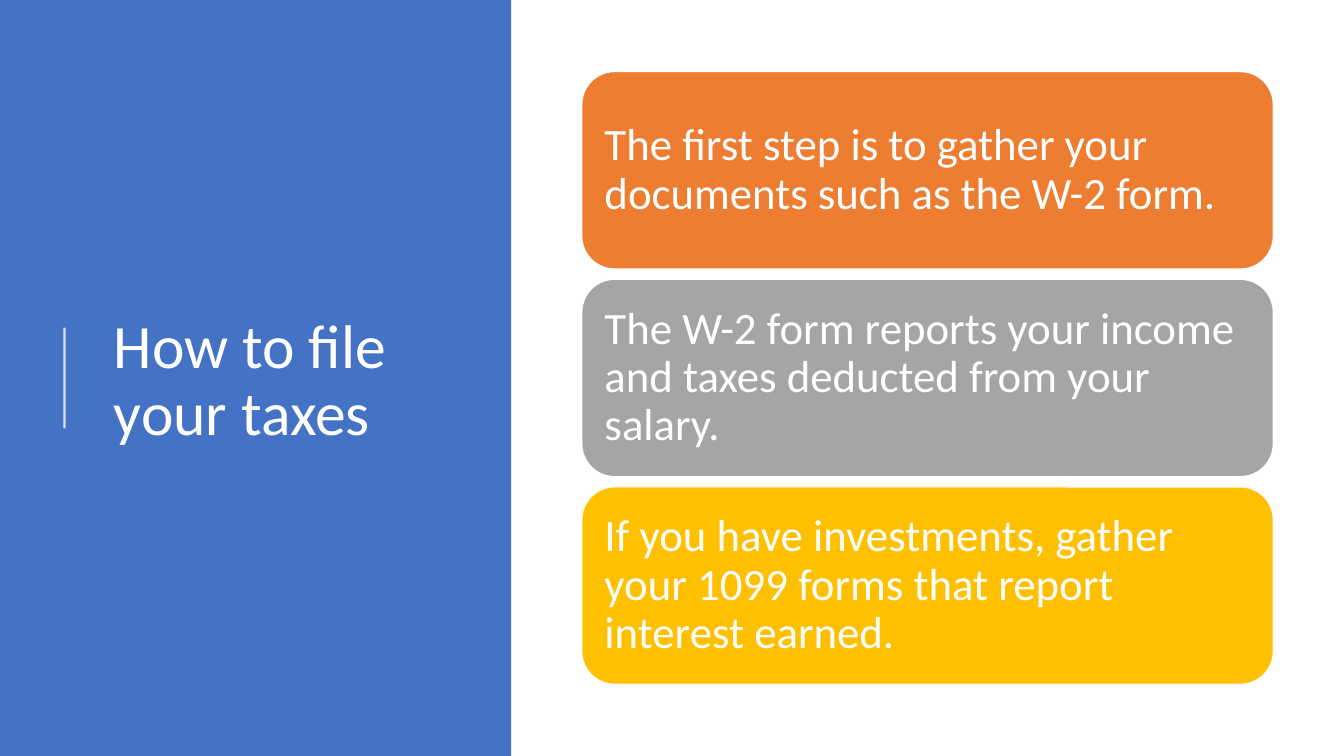
import pptx
import pptx.dml.color
import pptx.enum.shapes
import pptx.enum.text
import pptx.oxml
import pptx.oxml.ns
import pptx.util
from pptx.util import Inches

RGBColor = pptx.dml.color.RGBColor
MSO_SHAPE = pptx.enum.shapes.MSO_SHAPE
WHITE = RGBColor(0xFF, 0xFF, 0xFF)
BLUE = RGBColor(0x44, 0x72, 0xC4)
ORANGE = RGBColor(0xED, 0x7D, 0x31)
GRAY = RGBColor(0xA5, 0xA5, 0xA5)
GOLD = RGBColor(0xFF, 0xC0, 0x00)

STEPS = [
    ("The first step is to gather your documents such as the W-2 form.", ORANGE),
    ("The W-2 form reports your income and taxes deducted from your salary.", GRAY),
    ("If you have investments, gather your 1099 forms that report interest earned.", GOLD),
]
CARD_TOP, CARD_PITCH = 0.71, 2.06


def write_text(shape, text, size, inset):
    """Fill a shape with one left-aligned, vertically centred white paragraph."""
    tf = shape.text_frame
    frame_format = {
        "word_wrap": True,
        "auto_size": pptx.enum.text.MSO_AUTO_SIZE.NONE,
        "vertical_anchor": pptx.enum.text.MSO_ANCHOR.MIDDLE,
        "margin_left": Inches(inset),
        "margin_right": Inches(inset),
    }
    for name, value in frame_format.items():
        setattr(tf, name, value)
    p = tf.paragraphs[0]
    p.alignment = pptx.enum.text.PP_ALIGN.LEFT
    p.line_spacing = 0.9
    r = p.add_run()
    r.text = text
    r.font.name = "Calibri"
    r.font.size = pptx.util.Pt(size)
    r.font.color.rgb = WHITE


def add_filled(s, kind, left, top, width, height, color):
    sp = s.shapes.add_shape(kind, Inches(left), Inches(top), Inches(width), Inches(height))
    sp.shadow.inherit = False
    sp.fill.solid()
    sp.fill.fore_color.rgb = color
    sp.line.fill.background()
    return sp


def add_panel(s):
    """Add the blue side panel behind the title."""
    panel = add_filled(s, MSO_SHAPE.RECTANGLE, 0, 0, 5.07, 7.5, BLUE)
    s.shapes.title.element.addprevious(panel.element)


def add_title(s, text):
    title = s.shapes.title
    place = {"left": 1.03, "top": 0.78, "width": 3.69, "height": 6.02}
    for name, value in place.items():
        setattr(title, name, Inches(value))
    write_text(title, text, 44, 0.1)


def add_accent_line(s):
    """Add the slightly transparent white line beside the title."""
    line = s.shapes.add_connector(
        pptx.enum.shapes.MSO_CONNECTOR.STRAIGHT,
        Inches(0.64), Inches(4.25), Inches(0.64), Inches(3.25))
    line.line.width = pptx.util.Pt(1.5)
    line.line.color.rgb = WHITE
    sp_pr = line.element.spPr
    color = sp_pr.find(".//" + pptx.oxml.ns.qn("a:srgbClr"))
    color.append(pptx.oxml.parse_xml(
        f'<a:alpha {pptx.oxml.ns.nsdecls("a")} val="80000"/>'))
    sp_pr.append(pptx.oxml.parse_xml(f'<a:effectLst {pptx.oxml.ns.nsdecls("a")}/>'))


def add_step_card(s, top, text, color):
    card = add_filled(s, MSO_SHAPE.ROUNDED_RECTANGLE, 5.77, top, 6.86, 1.96, color)
    card.line.color.rgb = WHITE
    card.line.width = pptx.util.Pt(1)
    write_text(card, text, 32, 0.13)


def main():
    prs = pptx.Presentation()
    prs.slide_width = Inches(13.33)
    prs.slide_height = Inches(7.5)
    s = prs.slides.add_slide(prs.slide_layouts[5])
    add_panel(s)
    add_title(s, "How to file your taxes")
    add_accent_line(s)
    for i, (text, color) in enumerate(STEPS):
        add_step_card(s, CARD_TOP + i * CARD_PITCH, text, color)
    prs.save("out.pptx")


if __name__ == "__main__":
    main()
